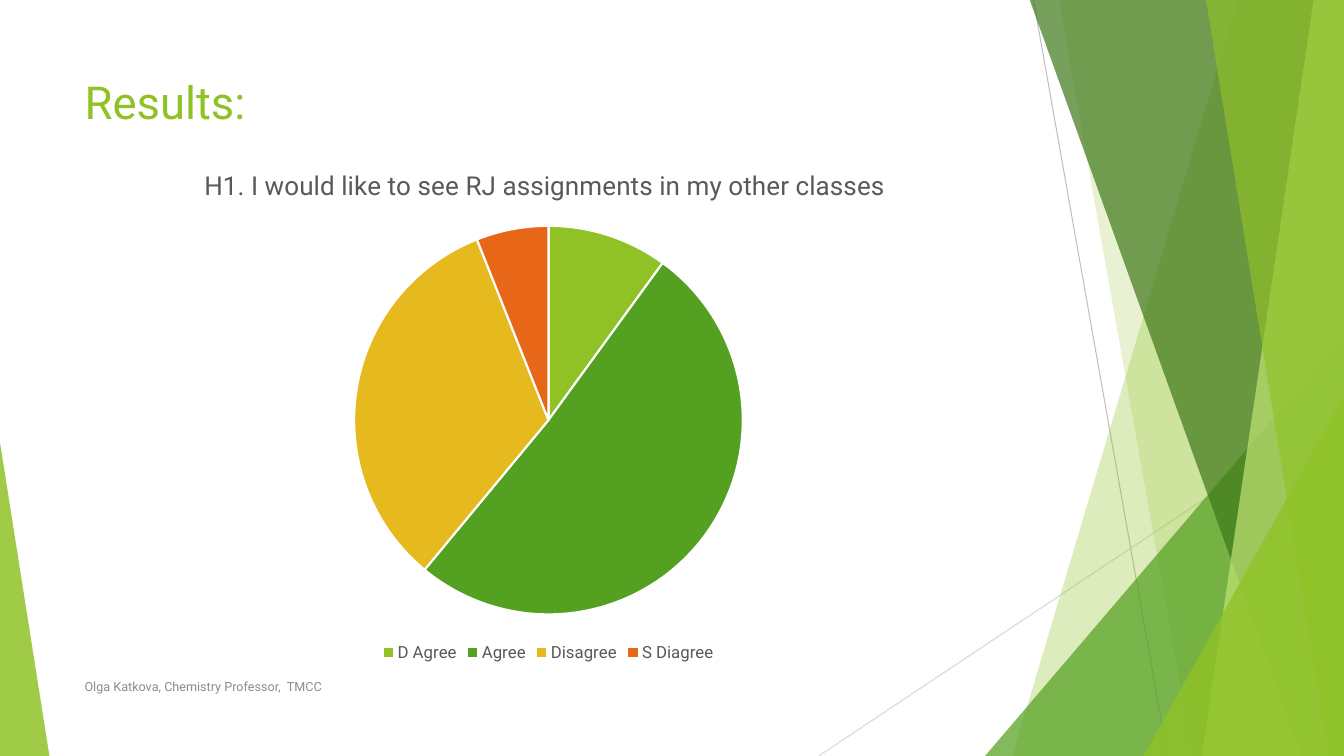
from dataclasses import dataclass

import pptx
import pptx.chart.data
import pptx.dml.color
import pptx.enum.chart
import pptx.enum.shapes
import pptx.enum.text
import pptx.oxml
import pptx.oxml.ns
import pptx.util
from pptx.util import Inches

COLORS = {
    "lime": "90C226", "green": "54A021", "forest": "3F7819", "pale": "C0E474",
    "gold": "E6B91E", "orange": "E76618", "white": "FFFFFF", "text": "595959",
    "footer": "8C8C8C", "line": "BFBFBF", "light_line": "D9D9D9",
}
FONT = "Roboto"
WIDTH, HEIGHT, TOP = 13.33, 7.5, -0.01
LEFT, CONTENT_WIDTH = 0.74, 9.4
QUESTION = "H1. I would like to see RJ assignments in my other classes "


@dataclass
class Ray:
    start: tuple[float, float]
    end: tuple[float, float]
    color: str


@dataclass
class Band:
    top_left: float
    bottom_left: float
    color: str
    alpha: int


@dataclass
class Wedge:
    left: float
    top: float
    width: float
    apex: float
    color: str
    alpha: int


@dataclass
class Slice:
    label: str
    value: int
    color: str


RAYS = [
    Ray((10.25, 0), (11.58, HEIGHT), "line"),
    Ray((WIDTH, 4.03), (8.12, HEIGHT), "light_line"),
]
FACETS = [
    Band(12.28, 10.04, "lime", 30),
    Band(10.5, 11.83, "lime", 20),
    Wedge(9.77, 3.33, 3.56, 1, "green", 72),
    Band(10.21, 12.91, "forest", 70),
    Band(13.03, 11.92, "pale", 70),
    Band(11.96, 13.18, "lime", 65),
    Wedge(11.34, 3.93, 1.99, 1, "lime", 80),
    Wedge(0, 4.39, 0.49, 0, "lime", 85),
]
SLICES = [
    Slice("D Agree", 10, "lime"),
    Slice("Agree", 51, "green"),
    Slice("Disagree", 33, "gold"),
    Slice("S Diagree", 6, "orange"),
]


def rgb(name: str) -> pptx.dml.color.RGBColor:
    return pptx.dml.color.RGBColor.from_string(COLORS[name])


def style_font(font, size: float, color: str) -> None:
    font.name = FONT
    font.size = pptx.util.Pt(size)
    font.bold = False
    font.color.rgb = rgb(color)


def write(tf, text: str, size: float, color: str) -> None:
    tf.word_wrap = True
    tf.vertical_anchor = pptx.enum.text.MSO_ANCHOR.MIDDLE
    p = tf.paragraphs[0]
    p.alignment = pptx.enum.text.PP_ALIGN.LEFT
    r = p.add_run()
    r.text = text
    style_font(r.font, size, color)


def draw_ray(s, ray: Ray) -> None:
    line = s.shapes.add_connector(
        pptx.enum.shapes.MSO_CONNECTOR.STRAIGHT,
        *(Inches(v) for v in ray.start + ray.end))
    line.line.color.rgb = rgb(ray.color)
    line.line.width = pptx.util.Pt(0.75)
    pptx.oxml.ns.qn("a:effectLst")
    line._element.spPr.append(
        line._element.makeelement(pptx.oxml.ns.qn("a:effectLst"), {}))


def draw_facet(s, facet: Band | Wedge) -> None:
    if isinstance(facet, Band):
        corners = [(WIDTH, TOP), (WIDTH, HEIGHT), (facet.bottom_left, HEIGHT)]
        builder = s.shapes.build_freeform(Inches(facet.top_left), Inches(TOP))
        builder.add_line_segments([(Inches(x), Inches(y)) for x, y in corners])
        sp = builder.convert_to_shape()
    else:
        sp = s.shapes.add_shape(
            pptx.enum.shapes.MSO_SHAPE.ISOSCELES_TRIANGLE,
            Inches(facet.left), Inches(facet.top),
            Inches(facet.width), Inches(HEIGHT - facet.top))
        sp.adjustments[0] = facet.apex
    sp.shadow.inherit = False
    sp.line.fill.background()
    sp.fill.solid()
    sp.fill.fore_color.rgb = rgb(facet.color)
    color = sp._element.spPr.find(".//" + pptx.oxml.ns.qn("a:srgbClr"))
    alpha = color.makeelement(
        pptx.oxml.ns.qn("a:alpha"), {"val": str(facet.alpha * 1000)})
    color.append(alpha)


def place_plot(chart, x: float, y: float, w: float, h: float) -> None:
    plot_area = chart._chartSpace.chart.plotArea
    for old in plot_area.findall(pptx.oxml.ns.qn("c:layout")):
        plot_area.remove(old)
    plot_area.insert(0, pptx.oxml.parse_xml(
        f'<c:layout {pptx.oxml.ns.nsdecls("c")}><c:manualLayout>'
        '<c:layoutTarget val="inner"/>'
        '<c:xMode val="edge"/><c:yMode val="edge"/>'
        f'<c:x val="{x}"/><c:y val="{y}"/><c:w val="{w}"/><c:h val="{h}"/>'
        '</c:manualLayout></c:layout>'))


def draw_chart(s) -> None:
    data = pptx.chart.data.CategoryChartData()
    data.categories = [item.label for item in SLICES]
    data.add_series(QUESTION, [item.value for item in SLICES])
    chart = s.shapes.add_chart(
        pptx.enum.chart.XL_CHART_TYPE.PIE, Inches(LEFT), Inches(1.47),
        Inches(CONTENT_WIDTH), Inches(5.14), data).chart
    chart.font.name = FONT
    chart.font.size = pptx.util.Pt(10)
    r = chart.chart_title.text_frame.paragraphs[0].add_run()
    r.text = QUESTION
    style_font(r.font, 18.6, "text")
    chart.has_legend = True
    chart.legend.position = pptx.enum.chart.XL_LEGEND_POSITION.BOTTOM
    chart.legend.include_in_layout = False
    style_font(chart.legend.font, 12, "text")
    plot = chart.plots[0]
    plot.vary_by_categories = True
    for i, item in enumerate(SLICES):
        fmt = plot.series[0].points[i].format
        fmt.fill.solid()
        fmt.fill.fore_color.rgb = rgb(item.color)
        fmt.line.color.rgb = rgb("white")
        fmt.line.width = pptx.util.Pt(1.5)
    place_plot(chart, 0.29, 0.15, 0.42, 0.75)


def main() -> None:
    prs = pptx.Presentation()
    prs.slide_width, prs.slide_height = Inches(WIDTH), Inches(HEIGHT)
    s = prs.slides.add_slide(prs.slide_layouts.get_by_name("Title Only"))
    for ray in RAYS:
        draw_ray(s, ray)
    for facet in FACETS:
        draw_facet(s, facet)
    title = s.shapes.title
    title.left, title.top = Inches(LEFT), Inches(0.67)
    title.width, title.height = Inches(CONTENT_WIDTH), Inches(0.68)
    write(title.text_frame, "Results:", 32.4, "lime")
    draw_chart(s)
    footer = s.shapes.add_textbox(
        Inches(LEFT), Inches(6.61), Inches(6.89), Inches(0.4))
    write(footer.text_frame, "Olga Katkova, Chemistry Professor,  TMCC", 9, "footer")
    prs.save("out.pptx")


if __name__ == "__main__":
    main()
